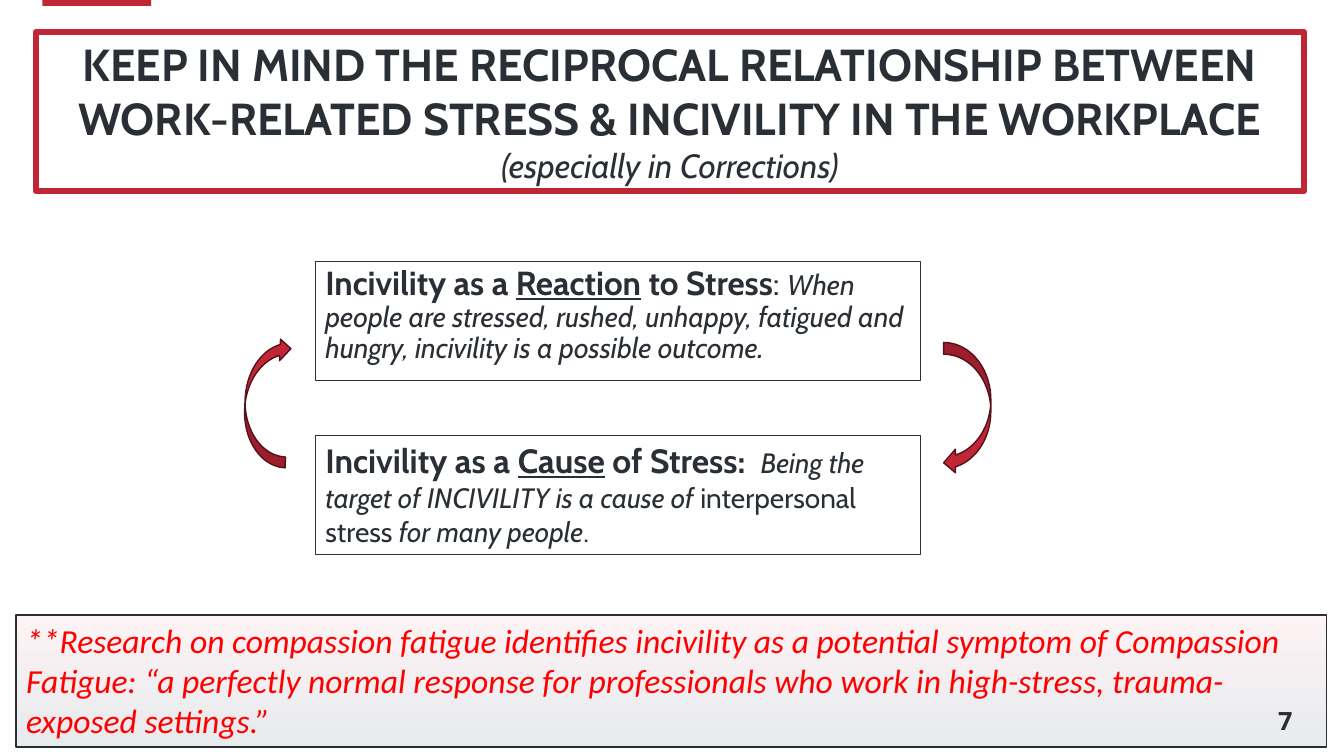
from dataclasses import dataclass

from pptx import Presentation
from pptx import util as u
from pptx.dml.color import RGBColor
from pptx.enum import shapes, text


@dataclass(frozen=True)
class Theme:
    ink: str = "2A2F36"
    red: str = "C12637"
    dark_red: str = "551118"
    alert: str = "FF0000"
    paper: str = "FFFFFF"
    blush: str = "FDF3F4"
    mist: str = "E8EAED"
    heading_font: str = "Cabin"
    note_font: str = "Calibri"
    number_font: str = "Open Sans"
    title_size: float = 32
    subtitle_size: float = 24
    note_size: float = 24
    number_size: float = 18


THEME = Theme()


def rgb(value):
    return RGBColor.from_string(value)


def place(part, box):
    part.left, part.top, part.width, part.height = (u.Cm(side) for side in box)


def outline(part, color, width):
    part.line.color.rgb = rgb(color)
    part.line.width = u.Pt(width)


def add_panel(slide, box, kind=shapes.MSO_SHAPE.RECTANGLE, fill=THEME.paper):
    panel = slide.shapes.add_shape(kind, *(u.Cm(side) for side in box))
    panel.shadow.inherit = False
    panel.fill.solid()
    panel.fill.fore_color.rgb = rgb(fill)
    panel.line.fill.background()
    return panel


def prepare_text(part, anchor=text.MSO_ANCHOR.TOP):
    frame = part.text_frame
    frame.word_wrap = True
    frame.auto_size = text.MSO_AUTO_SIZE.NONE
    frame.vertical_anchor = anchor
    return frame


def write(paragraph, words, size, style="", font=THEME.heading_font, color=THEME.ink):
    run = paragraph.add_run()
    run.text = words
    run.font.name = font
    run.font.size = u.Pt(size)
    run.font.color.rgb = rgb(color)
    run.font.bold = "b" in style
    run.font.italic = "i" in style
    run.font.underline = "u" in style


def add_banner(slide, box):
    title = slide.shapes.title
    place(title, box)
    outline(title, THEME.red, 4.5)
    frame = prepare_text(title)
    heading, subtitle = frame.paragraphs[0], frame.add_paragraph()
    heading.alignment = subtitle.alignment = text.PP_ALIGN.CENTER
    write(heading, "KEEP IN MIND THE RECIPROCAL RELATIONSHIP BETWEEN "
          "WORK-RELATED STRESS & INCIVILITY IN THE WORKPLACE", THEME.title_size, "b")
    write(subtitle, "(especially in Corrections)", THEME.subtitle_size, "i")


def add_statement(slide, box, phrases, line_spacing):
    statement = add_panel(slide, box)
    outline(statement, THEME.ink, 0.75)
    paragraph = prepare_text(statement).paragraphs[0]
    paragraph.alignment = text.PP_ALIGN.LEFT
    paragraph.line_spacing = line_spacing
    for words, size, style in phrases:
        write(paragraph, words, size, style)


def add_cycle_arrow(slide, box, rotation):
    arrow = add_panel(slide, box, shapes.MSO_SHAPE.CURVED_DOWN_ARROW, THEME.red)
    outline(arrow, THEME.dark_red, 1)
    arrow.rotation = rotation


def add_cycle(slide, box):
    left, top, width, height = box
    statement_height = 3
    reaction = [
        ("Incivility as a ", 23.8, "b"),
        ("Reaction", 23.8, "bu"),
        (" to Stress", 23.8, "b"),
        (": ", 23.8, ""),
        ("When people are stressed, rushed, unhappy, fatigued and hungry, "
         "incivility is a possible outcome", 20.4, "i"),
        (".", 17, "bi"),
    ]
    cause = [
        ("Incivility as a ", 24, "b"),
        ("Cause", 24, "bu"),
        (" of Stress:  ", 24, "b"),
        ("Being the target of INCIVILITY is a cause of ", 20, "i"),
        ("interpersonal stress ", 20, ""),
        ("for many people", 20, "i"),
        (".", 20, ""),
    ]
    add_statement(slide, (left, top, width, statement_height), reaction, 0.9)
    add_statement(slide, (left, top + height - statement_height, width, statement_height),
                  cause, 1.0)
    add_cycle_arrow(slide, (left + width - 0.48, top + 3.1, 3.33, 1.19), 90)
    add_cycle_arrow(slide, (left - 2.87, top + 2.98, 3.28, 1.09), 272.8)


def add_research_note(slide, box):
    note = add_panel(slide, box)
    outline(note, THEME.ink, 1.25)
    note.fill.gradient()
    note.fill.gradient_angle = 270
    for stop, color, position in zip(note.fill.gradient_stops,
                                     (THEME.blush, THEME.mist), (0, 1)):
        stop.color.rgb = rgb(color)
        stop.position = position
    paragraph = prepare_text(note).paragraphs[0]
    paragraph.alignment = text.PP_ALIGN.LEFT
    write(paragraph, "**Research on compassion fatigue identifies incivility as a potential "
          "symptom of Compassion Fatigue: “a perfectly normal response for professionals "
          "who work in high-stress, trauma-exposed settings.”",
          THEME.note_size, "i", THEME.note_font, THEME.alert)


def add_page_number(slide, box):
    number = slide.shapes.add_textbox(*(u.Cm(side) for side in box))
    paragraph = prepare_text(number, text.MSO_ANCHOR.MIDDLE).paragraphs[0]
    paragraph.alignment = text.PP_ALIGN.RIGHT
    write(paragraph, "7", THEME.number_size, "b", THEME.number_font)


def main():
    deck = Presentation()
    deck.slide_width, deck.slide_height = u.Cm(33.87), u.Cm(19.05)
    slide = deck.slides.add_slide(deck.slide_layouts.get_by_name("Title Only"))
    add_panel(slide, (1.07, 0, 2.74, 0.15), fill=THEME.red)
    add_banner(slide, (0.91, 0.81, 31.95, 4.01))
    add_cycle(slide, (7.95, 6.6, 15.24, 7.37))
    add_research_note(slide, (0.41, 15.49, 33.02, 3.33))
    add_page_number(slide, (30.48, 17.7, 2.34, 0.89))
    deck.save("out.pptx")


if __name__ == "__main__":
    main()
